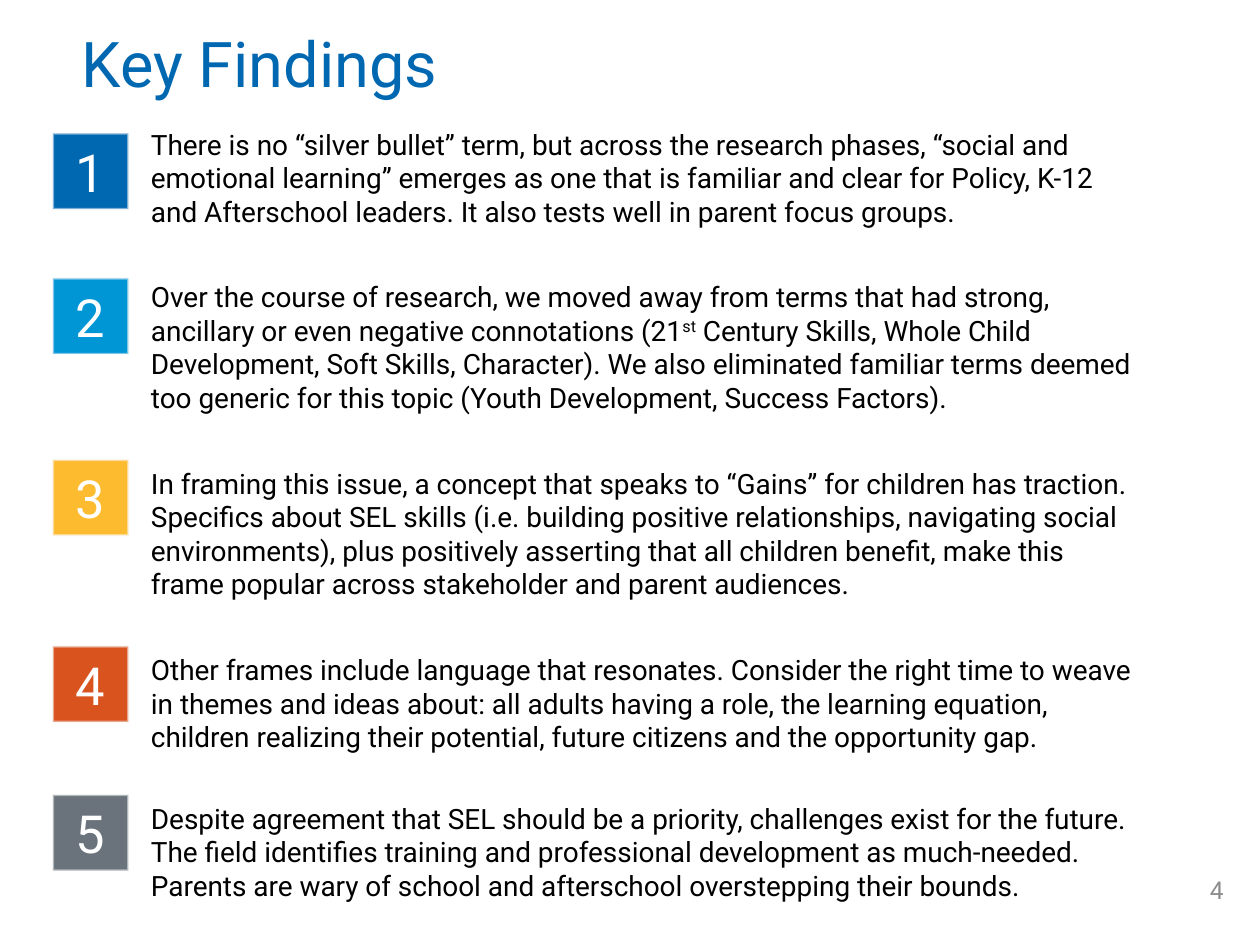
from lxml import etree
from pptx import Presentation
from pptx import util as u
from pptx.dml.color import RGBColor
from pptx.enum import shapes, text
from pptx.oxml.ns import qn

COLORS = {
    "title": "0067B1",
    "body": "000000",
    "number": "FFFFFF",
    "page": "8C8C8C",
    "outline": "F9F9F9",
    "paper": "FFFFFF",
    "blue": "0067B1",
    "sky": "0096D6",
    "yellow": "FDBB30",
    "orange": "D9531E",
    "gray": "6A737B",
}

FORMATS = {
    "title": {"name": "Roboto", "size": u.Pt(36)},
    "body": {"name": "Roboto", "size": u.Pt(16)},
    "number": {"name": "Roboto", "size": u.Pt(30)},
    "page": {"name": "Roboto", "size": u.Pt(14)},
}

FINDINGS = [
    ("blue", 1.06, 0.96, 0.91, [
        "There is no “silver bullet” term, but across the research phases, “social and "
        "emotional learning” emerges as one that is familiar and clear for Policy, K-12 "
        "and Afterschool leaders. It also tests well in parent focus groups."]),
    ("sky", 2.21, 2.17, 1.18, [
        "Over the course of research, we moved away from terms that had strong, "
        "ancillary or even negative connotations (21",
        "st",
        " Century Skills, Whole Child Development, Soft Skills, Character). We also "
        "eliminated familiar terms deemed too generic for this topic (Youth "
        "Development, Success Factors)."]),
    ("yellow", 3.65, 3.65, 1.18, [
        "In framing this issue, a concept that speaks to “Gains” for children has "
        "traction. Specifics about SEL skills (i.e. building positive relationships, "
        "navigating social environments), plus positively asserting that all children "
        "benefit, make this frame popular across stakeholder and parent audiences."]),
    ("orange", 5.13, 5.13, 0.89, [
        "Other frames include language that resonates. Consider the right time to weave "
        "in themes and ideas about: all adults having a role, the learning equation, "
        "children realizing their potential, future citizens and the opportunity gap."]),
    ("gray", 6.31, 6.31, 0.89, [
        "Despite agreement that SEL should be a priority, challenges exist for the "
        "future. The field identifies training and professional development as "
        "much-needed. Parents are wary of school and afterschool overstepping their "
        "bounds."]),
]


def color(name):
    return RGBColor.from_string(COLORS[name])


def write(frame, parts, role, anchor, align=text.PP_ALIGN.LEFT):
    frame.word_wrap = True
    frame.vertical_anchor = anchor
    paragraph = frame.paragraphs[0]
    paragraph.alignment = align
    for part in parts:
        run = paragraph.add_run()
        run.text = part
        for key, value in FORMATS[role].items():
            setattr(run.font, key, value)
        run.font.color.rgb = color(role)
        if part == "st":
            run.font._element.set("baseline", "30000")
    return paragraph


def add_label(slide, box, parts, role, anchor, align=text.PP_ALIGN.LEFT):
    label = slide.shapes.add_textbox(*map(u.Inches, box))
    return write(label.text_frame, parts, role, anchor, align)


def add_badge(slide, number, fill, top):
    badge = slide.shapes.add_shape(
        shapes.MSO_SHAPE.RECTANGLE,
        u.Inches(0.42), u.Inches(top), u.Inches(0.6), u.Inches(0.6))
    badge.shadow.inherit = False
    badge.fill.solid()
    badge.fill.fore_color.rgb = color(fill)
    badge.line.width = u.Pt(1.35)
    badge.line.color.rgb = color("outline")
    outline = badge.line._ln.find(".//" + qn("a:srgbClr"))
    etree.SubElement(outline, qn("a:alpha")).set("val", "50000")
    write(badge.text_frame, [str(number)], "number",
          text.MSO_ANCHOR.MIDDLE, text.PP_ALIGN.CENTER)


def add_last_panel(slide, box, parts):
    panel = slide.shapes.add_shape(shapes.MSO_SHAPE.RECTANGLE, *map(u.Inches, box))
    panel.shadow.inherit = False
    panel.fill.solid()
    panel.fill.fore_color.rgb = color("paper")
    panel.line.fill.background()
    write(panel.text_frame, parts, "body", text.MSO_ANCHOR.TOP)


def main():
    deck = Presentation()
    deck.slide_width, deck.slide_height = u.Inches(10), u.Inches(7.5)
    slide = deck.slides.add_slide(deck.slide_layouts[6])

    title = add_label(slide, (0.55, 0, 7.84, 1.06), ["Key Findings"], "title",
                      text.MSO_ANCHOR.MIDDLE)
    title.line_spacing = 0.9
    add_label(slide, (9.07, 6.86, 0.74, 0.4), ["4"], "page",
              text.MSO_ANCHOR.MIDDLE, text.PP_ALIGN.RIGHT)

    for number, (fill, badge_top, text_top, height, parts) in enumerate(FINDINGS, 1):
        add_badge(slide, number, fill, badge_top)
        box = (1.1, text_top, 8, height)
        if number == len(FINDINGS):
            add_last_panel(slide, box, parts)
        else:
            add_label(slide, box, parts, "body", text.MSO_ANCHOR.TOP)

    deck.save("out.pptx")


if __name__ == "__main__":
    main()
